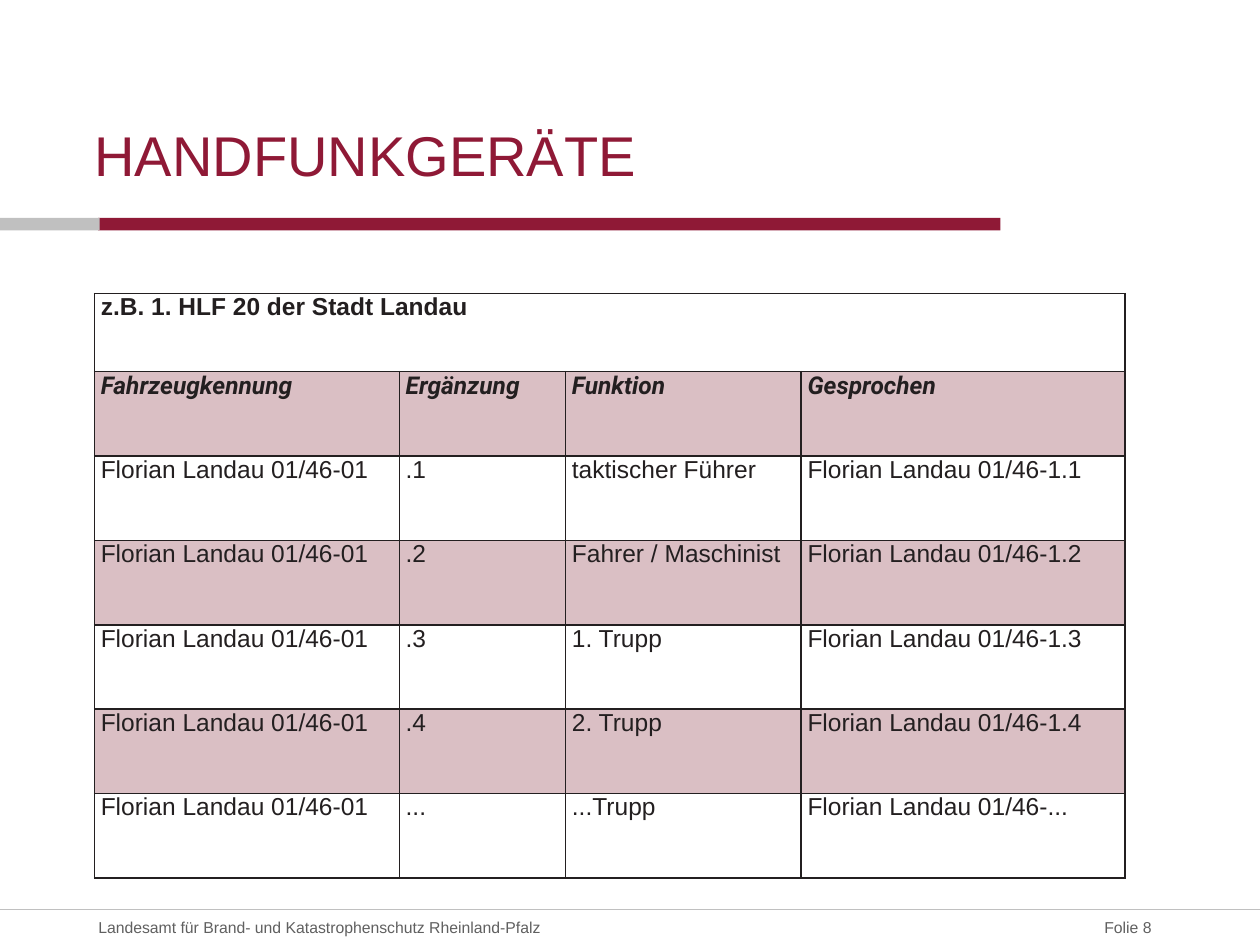
from lxml import etree
from pptx import Presentation
from pptx.dml.color import RGBColor
from pptx.enum.shapes import MSO_CONNECTOR, MSO_SHAPE
from pptx.enum.text import MSO_ANCHOR as Anchor, MSO_AUTO_SIZE as AutoSize, PP_ALIGN as Align
from pptx.oxml import parse_xml
from pptx.oxml.ns import nsdecls, qn
from pptx.util import Inches, Pt

COLORS = {"red": "8F1936", "gray": "C0C0C0", "footer": "606060",
          "ink": "231F20", "rose": "DABFC4"}
UNIT = Inches(0.1)  # grid of 100 columns by 75 rows


def rgb(name):
    return RGBColor.from_string(COLORS[name])


def grid(*values):
    return [round(v * UNIT) for v in values]


class Deck:
    def __init__(self, font="Arial"):
        self.font = font
        self.prs = Presentation()
        self.prs.slide_width, self.prs.slide_height = grid(100, 75)
        self.s = self.prs.slides.add_slide(self.prs.slide_layouts[5])

    def run(self, p, text, size, color, font=None, bold=False, italic=False):
        r = p.add_run()
        r.text = text
        f = r.font
        f.name, f.size, f.bold, f.italic = font or self.font, Pt(size), bold, italic
        f.color.rgb = rgb(color)

    def fill_frame(self, tf, text, size, color, anchor, align=Align.LEFT, right=0):
        tf.word_wrap, tf.auto_size, tf.vertical_anchor = True, AutoSize.NONE, anchor
        tf.margin_left = tf.margin_top = tf.margin_bottom = 0
        tf.margin_right = round(right * UNIT)
        p = tf.paragraphs[0]
        p.alignment = align
        self.run(p, text, size, color)

    def title(self, box, text):
        sp = self.s.shapes.title
        sp.left, sp.top, sp.width, sp.height = grid(*box)
        self.fill_frame(sp.text_frame, text, 32, "red", Anchor.BOTTOM)

    def text(self, box, text, **style):
        sp = self.s.shapes.add_textbox(*grid(*box))
        self.fill_frame(sp.text_frame, text, 9, "footer", Anchor.MIDDLE, **style)

    def bar(self, box, color):
        sp = self.s.shapes.add_shape(MSO_SHAPE.RECTANGLE, *grid(*box))
        sp.shadow.inherit = False
        sp.fill.solid()
        sp.fill.fore_color.rgb = rgb(color)
        sp.line.fill.background()

    def line(self, ends, color):
        cx = self.s.shapes.add_connector(MSO_CONNECTOR.STRAIGHT, *grid(*ends))
        cx.line.color.rgb, cx.line.width = rgb(color), Pt(0.75)
        etree.SubElement(cx._element.spPr, qn("a:effectLst"))

    def border(self, cell):
        tcPr = cell._tc.get_or_add_tcPr()
        for i, side in enumerate(("lnL", "lnR", "lnT", "lnB")):
            tcPr.insert(i, parse_xml(
                f'<a:{side} {nsdecls("a")} w="{Pt(1)}"><a:solidFill>'
                f'<a:srgbClr val="{COLORS["ink"]}"/></a:solidFill></a:{side}>'))

    def table(self, left, top, widths, heights, rows):
        frame = self.s.shapes.add_table(
            len(rows), len(widths),
            *grid(left, top, sum(widths), sum(heights)))
        tbl = frame.table
        for col, width in zip(tbl.columns, grid(*widths)):
            col.width = width
        for row, height in zip(tbl.rows, grid(*heights)):
            row.height = height
        tbl.cell(0, 0).merge(tbl.cell(0, len(widths) - 1))
        for i, texts in enumerate(rows):
            style = {"bold": i < 2, "italic": i == 1,
                     "font": "Roboto" if i == 1 else None}
            for j in range(len(widths)):
                cell = tbl.cell(i, j)
                cell.margin_left = Inches(0.05)
                cell.margin_top = cell.margin_right = cell.margin_bottom = 0
                if i % 2:
                    cell.fill.solid()
                    cell.fill.fore_color.rgb = rgb("rose")
                else:
                    cell.fill.background()
                self.border(cell)
                if j < len(texts):
                    self.run(cell.text_frame.paragraphs[0], texts[j], 14, "ink", **style)


def main():
    deck = Deck()

    # Title and bars below it
    deck.bar((7.8, 17.3, 71.6, 1), "red")
    deck.bar((0, 17.3, 7.9, 1), "gray")
    deck.title((7.5, 4.8, 63.9, 10.1), "HANDFUNKGERÄTE")

    # Footer
    deck.line((0, 72.2, 100, 72.2), "gray")
    deck.text((79.4, 72.2, 12.7, 2.8), "Folie 8", align=Align.RIGHT, right=0.7)
    deck.text((7.8, 72.2, 55.1, 2.8),
              "Landesamt für Brand- und Katastrophenschutz Rheinland-Pfalz")

    # Table of radio call signs
    call_sign = "Florian Landau 01/46-"
    crew = [(".1", "taktischer Führer", "1.1"),
            (".2", "Fahrer / Maschinist", "1.2"),
            (".3", "1. Trupp", "1.3"),
            (".4", "2. Trupp", "1.4"),
            ("...", "...Trupp", "...")]
    rows = [("z.B. 1. HLF 20 der Stadt Landau",),
            ("Fahrzeugkennung", "Ergänzung", "Funktion", "Gesprochen")]
    rows += [(call_sign + "01", suffix, role, call_sign + spoken)
             for suffix, role, spoken in crew]
    deck.table(7.5, 23.3, (24.2, 13.2, 18.7, 25.7), [6.2] + [6.7] * 6, rows)

    deck.prs.save("out.pptx")


if __name__ == "__main__":
    main()
